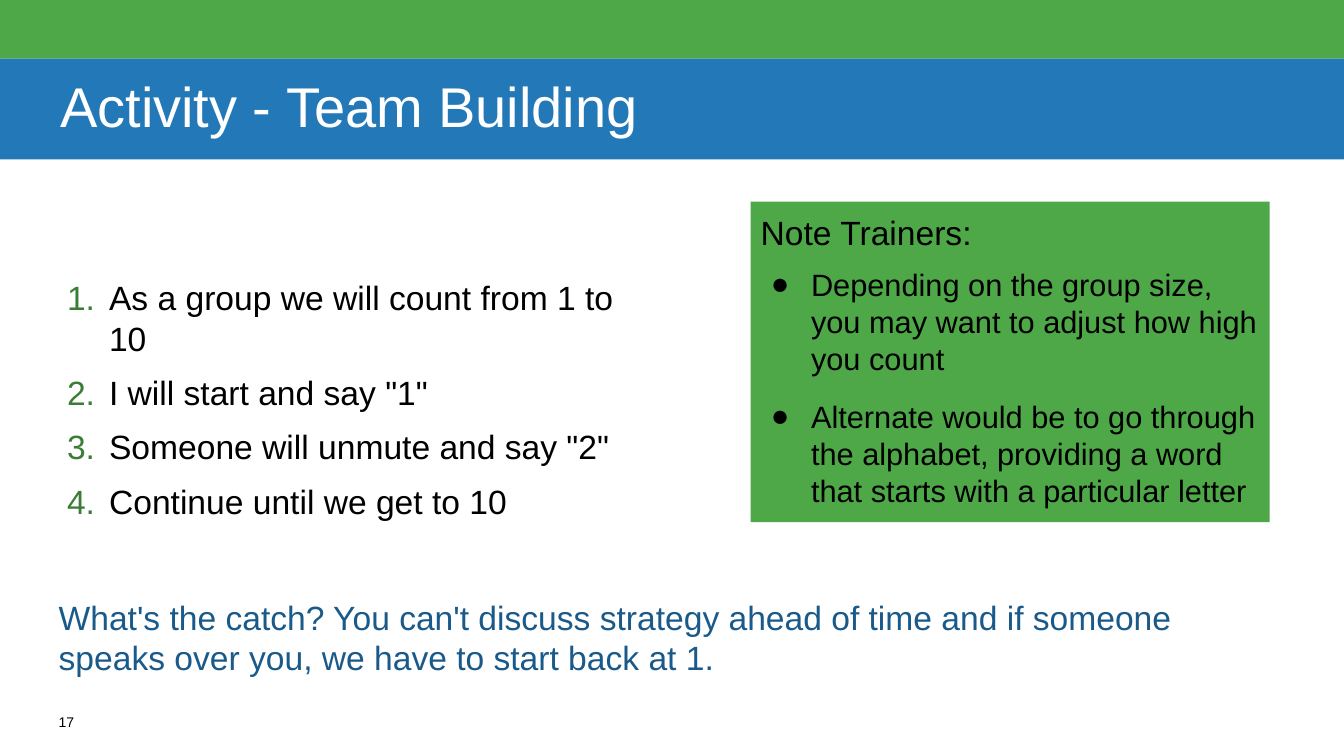
from dataclasses import dataclass

from lxml import etree
from pptx import Presentation, util as u
from pptx.dml.color import RGBColor
from pptx.enum import shapes, text
from pptx.oxml.ns import qn


@dataclass(frozen=True)
class Theme:
    font: str = "Arial"
    green: str = "4EA848"
    blue: str = "2379B8"
    white: str = "FFFFFF"
    black: str = "000000"
    navy: str = "1A5A8A"
    leaf: str = "3A7E36"
    title: int = 40
    body: int = 24
    note: int = 22
    small: int = 10


T = Theme()
STEPS = (
    "As a group we will count from 1 to 10",
    'I will start and say "1"',
    'Someone will unmute and say "2"',
    "Continue until we get to 10",
)
NOTES = (
    "Depending on the group size, you may want to adjust how high you count",
    "Alternate would be to go through the alphabet, providing a word "
    "that starts with a particular letter",
)
CATCH = ("What's the catch? You can't discuss strategy ahead of time and if "
         "someone speaks over you, we have to start back at 1.")


def place(box):
    return [u.Cm(n) for n in box]


def rect(slide, box, fill):
    shape = slide.shapes.add_shape(shapes.MSO_SHAPE.RECTANGLE, *place(box))
    shape.shadow.inherit = False
    shape.fill.solid()
    shape.fill.fore_color.rgb = RGBColor.from_string(fill)
    shape.line.fill.background()
    return shape


def frame(shape, side=0, edge=0, anchor=text.MSO_ANCHOR.TOP, grow=False):
    tf = shape.text_frame
    tf.word_wrap = True
    tf.margin_left = tf.margin_right = u.Cm(side)
    tf.margin_top = tf.margin_bottom = u.Cm(edge)
    tf.vertical_anchor = anchor
    fit = text.MSO_AUTO_SIZE
    tf.auto_size = fit.SHAPE_TO_FIT_TEXT if grow else fit.NONE
    return tf


def label(slide, box, grow=False):
    return frame(slide.shapes.add_textbox(*place(box)), grow=grow)


def write(tf, words, size, color, first=True, before=0, after=0):
    para = tf.paragraphs[0] if first else tf.add_paragraph()
    para.alignment = text.PP_ALIGN.LEFT
    para.space_before = u.Pt(before)
    para.space_after = u.Pt(after)
    run = para.add_run()
    run.text = words
    run.font.name = T.font
    run.font.size = u.Pt(size)
    run.font.color.rgb = RGBColor.from_string(color)
    return para


def mark(para, hang, color, kind, **attrs):
    """Give a paragraph a hanging bullet or number."""
    props = para._p.get_or_add_pPr()
    props.set("marL", str(u.Cm(1.27)))
    props.set("indent", str(-u.Cm(hang)))
    tint = etree.SubElement(props, qn("a:buClr"))
    etree.SubElement(tint, qn("a:srgbClr"), val=color)
    etree.SubElement(props, qn("a:buFont"), typeface=T.font)
    etree.SubElement(props, qn(kind), **attrs)


# Green strip with the title band below it
def header(slide, box, strip=1.48):
    left, top, width, height = box
    rect(slide, (left, top, width, strip), T.green)
    band = rect(slide, (left, top + strip, width, height - strip), T.blue)
    tf = frame(band, side=1.52, anchor=text.MSO_ANCHOR.MIDDLE)
    para = write(tf, "Activity - Team Building", T.title, T.white)
    para.line_spacing = 0.9


# Numbered steps
def steps(slide, box):
    tf = label(slide, box)
    for i, step in enumerate(STEPS):
        para = write(tf, step, T.body, T.black, i == 0, 10 if i else 0)
        mark(para, 1.06, T.leaf, "a:buAutoNum", type="arabicPeriod")


# Catch line under the steps
def catch(slide, box):
    write(label(slide, box, grow=True), CATCH, T.body, T.navy, after=6)


# Slide number
def number(slide, box):
    write(label(slide, box), "17", T.small, T.black)


# Green panel for trainers
def panel(slide, box):
    tf = frame(rect(slide, box, T.green), side=0.25, edge=0.25, grow=True)
    write(tf, "Note Trainers:", T.body, T.black)
    for note, before, after in zip(NOTES, (10, 15), (0, 15)):
        para = write(tf, note, T.note, T.black, False, before, after)
        mark(para, 1.01, T.black, "a:buChar", char="●")


def main():
    deck = Presentation()
    deck.slide_width, deck.slide_height = u.Cm(33.87), u.Cm(19.05)
    slide = deck.slides.add_slide(deck.slide_layouts[6])
    left = 1.48
    header(slide, (0, 0, 33.87, 4.02))
    steps(slide, (left, 6.99, 14.82, 8.89))
    catch(slide, (left, 15.03, 30.9, 2.06))
    number(slide, (left, 17.99, 1.06, 0.64))
    panel(slide, (18.92, 5.08, 13.08, 8.08))
    deck.save("out.pptx")


if __name__ == "__main__":
    main()
